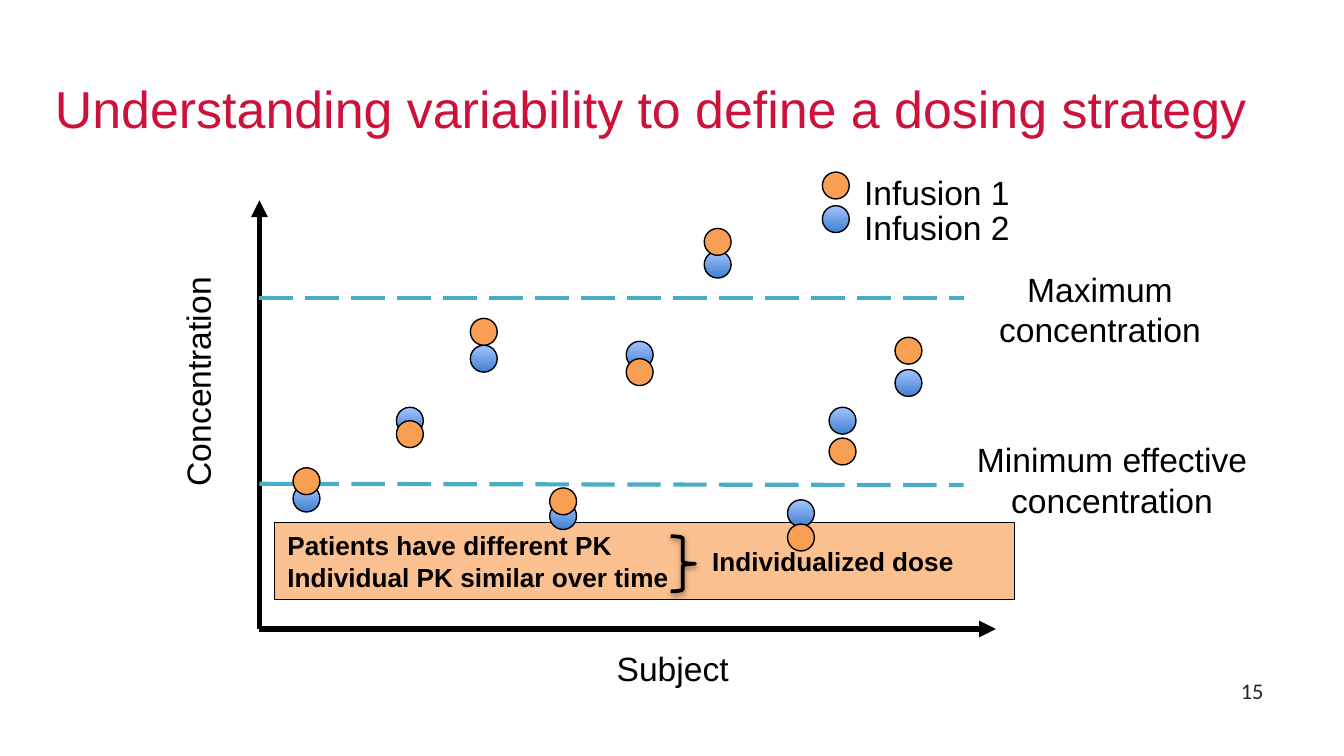
from dataclasses import dataclass

from lxml.etree import SubElement
from pptx import Presentation
from pptx.dml.color import RGBColor
from pptx.enum.dml import MSO_LINE
from pptx.enum.shapes import MSO_CONNECTOR, MSO_SHAPE
from pptx.enum.text import MSO_ANCHOR, MSO_AUTO_SIZE, PP_ALIGN
from pptx.oxml.ns import qn
from pptx.util import Pt

COLORS = {
    "title": "CD113B",
    "ink": "000000",
    "number": "262626",
    "limit": "4BACC6",
    "infusion1": "F99F54",
    "infusion2_dark": "3F80CE",
    "infusion2_light": "A4C4FF",
    "panel": "FAC090",
}
DOT = 14.4


@dataclass
class Label:
    text: str
    x: float
    y: float
    w: float
    h: float
    size: float = 18
    align: PP_ALIGN = PP_ALIGN.CENTER
    color: str = "ink"
    font: str = "Arial"
    bold: bool = False
    rotation: float = 0
    anchor: MSO_ANCHOR = MSO_ANCHOR.TOP
    grow: bool = True


@dataclass
class Line:
    x1: float
    y1: float
    x2: float
    y2: float
    color: str
    width: float
    dashed: bool = False


@dataclass
class Subject:
    x: float
    infusion1: float
    infusion2: float


LABELS = [
    Label("Understanding variability to define a dosing strategy", 22.3, 37.4, 675.4, 56.9,
          27.8, PP_ALIGN.LEFT, "title", grow=False),
    Label("15", 516.2, 359.3, 167.8, 21.6, 12, PP_ALIGN.RIGHT, "number", "Calibri",
          anchor=MSO_ANCHOR.MIDDLE, grow=False),
    Label("Concentration", 37.4, 190.1, 136.8, 28.8, rotation=270),
    Label("Subject", 309.6, 343.4, 101.5, 28.8),
    Label("Minimum effective concentration", 516.2, 231.8, 159.1, 51.1),
    Label("Maximum concentration", 516.2, 140.4, 146.2, 51.1),
    Label("Infusion 1", 455.8, 88.6, 101.5, 28.8, align=PP_ALIGN.LEFT),
    Label("Infusion 2", 455.8, 107.3, 101.5, 28.8, align=PP_ALIGN.LEFT),
    Label("Individualized dose", 374.4, 288.7, 221.8, 24.5, 14, PP_ALIGN.LEFT, bold=True),
]
LINES = [
    Line(139, 107.3, 139, 337, "ink", 3),
    Line(533.5, 337, 139, 337, "ink", 3),
    Line(139, 159.8, 516.2, 159.8, "limit", 2.25, True),
    Line(139, 259.2, 516.2, 259.9, "limit", 2.25, True),
]
SUBJECTS = [
    Subject(157, 250.6, 259.9),
    Subject(212.4, 225.4, 218.2),
    Subject(252, 170.6, 185),
    Subject(294.5, 261.4, 269.3),
    Subject(335.5, 192.2, 182.9),
    Subject(377.3, 122.4, 134.6),
    Subject(421.9, 280.8, 267.8),
    Subject(444.2, 234.7, 218.2),
    Subject(479.5, 180.7, 198),
]


def rgb(name: str) -> RGBColor:
    return RGBColor.from_string(COLORS[name])


def write(tf, text: str, size: float, align: PP_ALIGN, color: str, font: str, bold: bool) -> None:
    tf.word_wrap = True
    tf.text = text
    for p in tf.paragraphs:
        p.alignment = align
        for r in p.runs:
            r.font.size = Pt(size)
            r.font.name = font
            r.font.bold = bold
            r.font.color.rgb = rgb(color)


def add_label(shapes, label: Label) -> None:
    sp = shapes.add_textbox(Pt(label.x), Pt(label.y), Pt(label.w), Pt(label.h))
    sp.rotation = label.rotation
    tf = sp.text_frame
    write(tf, label.text, label.size, label.align, label.color, label.font, label.bold)
    tf.vertical_anchor = label.anchor
    if label.grow:
        tf.auto_size = MSO_AUTO_SIZE.SHAPE_TO_FIT_TEXT


def add_line(shapes, line: Line) -> None:
    cx = shapes.add_connector(MSO_CONNECTOR.STRAIGHT, Pt(line.x1), Pt(line.y1),
                              Pt(line.x2), Pt(line.y2))
    cx.line.color.rgb = rgb(line.color)
    cx.line.width = Pt(line.width)
    if line.dashed:
        cx.line.dash_style = MSO_LINE.LONG_DASH
    else:
        SubElement(cx.line._get_or_add_ln(), qn("a:headEnd"), type="triangle")
    SubElement(cx._element.spPr, qn("a:effectLst"))


def add_outlined(shapes, kind: MSO_SHAPE, x: float, y: float, w: float, h: float,
                 width: float = 0.75):
    sp = shapes.add_shape(kind, Pt(x), Pt(y), Pt(w), Pt(h))
    sp.shadow.inherit = False
    sp.line.color.rgb = rgb("ink")
    sp.line.width = Pt(width)
    return sp


def add_infusion1(shapes, x: float, y: float) -> None:
    sp = add_outlined(shapes, MSO_SHAPE.OVAL, x, y, DOT, DOT)
    sp.fill.solid()
    sp.fill.fore_color.rgb = rgb("infusion1")


def add_infusion2(shapes, x: float, y: float) -> None:
    sp = add_outlined(shapes, MSO_SHAPE.OVAL, x, y, DOT, DOT)
    sp.fill.gradient()
    sp.fill.gradient_angle = 90
    for stop, name in zip(sp.fill.gradient_stops, ("infusion2_dark", "infusion2_light")):
        stop.color.rgb = rgb(name)


def add_panel(shapes) -> None:
    sp = add_outlined(shapes, MSO_SHAPE.RECTANGLE, 146.9, 280.1, 396.7, 41)
    sp.fill.solid()
    sp.fill.fore_color.rgb = rgb("panel")
    write(sp.text_frame, "Patients have different PK\nIndividual PK similar over time",
          14, PP_ALIGN.LEFT, "ink", "Arial", True)


def add_brace(shapes) -> None:
    sp = add_outlined(shapes, MSO_SHAPE.RIGHT_BRACE, 359.3, 287.3, 13, 29.5, 2)
    sp.fill.background()
    effects = sp._element.spPr.find(qn("a:effectLst"))
    shadow = SubElement(effects, qn("a:outerShdw"), blurRad=str(Pt(3.1)), dist=str(Pt(1.6)),
                        dir="5400000", rotWithShape="0")
    color = SubElement(shadow, qn("a:srgbClr"), val=COLORS["ink"])
    SubElement(color, qn("a:alpha"), val="38000")


def main() -> None:
    prs = Presentation()
    prs.slide_width, prs.slide_height = Pt(720), Pt(405)
    s = prs.slides.add_slide(prs.slide_layouts[6])
    for line in LINES:
        add_line(s.shapes, line)
    add_panel(s.shapes)
    add_brace(s.shapes)
    for label in LABELS:
        add_label(s.shapes, label)
    add_infusion1(s.shapes, 440.6, 92.2)
    add_infusion2(s.shapes, 440.6, 110.2)
    dots = s.shapes.add_group_shape().shapes
    for subject in SUBJECTS:
        add_infusion2(dots, subject.x, subject.infusion2)
        add_infusion1(dots, subject.x, subject.infusion1)
    prs.save("out.pptx")


if __name__ == "__main__":
    main()
